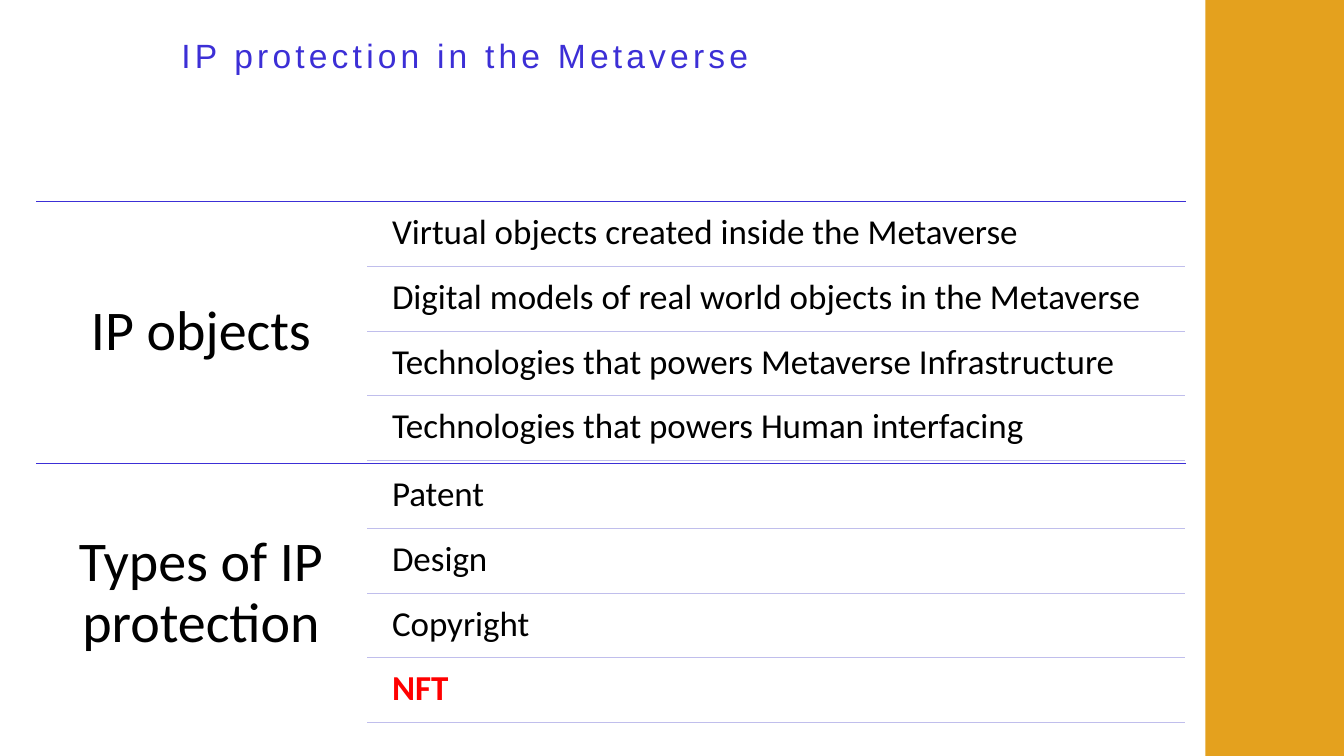
"""Build a slide that lists IP objects and types of IP protection in the Metaverse."""
from lxml.etree import SubElement
from pptx import Presentation
from pptx.dml.color import RGBColor
from pptx.enum.shapes import MSO_CONNECTOR, MSO_SHAPE
from pptx.enum.text import MSO_ANCHOR as ANCHOR, PP_ALIGN as ALIGN
from pptx.oxml import parse_xml
from pptx.oxml.ns import qn
from pptx.util import Cm, Pt

INDIGO, LAVENDER, ORANGE = "3C2FD6", "C0BEEC", "E4A11E"
BLACK, RED = "000000", "FF0000"
SECTIONS = [
    ("IP objects", [
        "Virtual objects created inside the Metaverse",
        "Digital models of real world objects in the Metaverse",
        "Technologies that powers Metaverse Infrastructure",
        "Technologies that powers Human interfacing",
    ]),
    ("Types of IP protection", ["Patent", "Design", "Copyright", "NFT"]),
]
SECTION_TOP, SECTION_PITCH, SECTION_H = 5.08, 6.6, 6.58
ROW_GAP, ROW_H, ROW_PITCH = 0.08, 1.55, 1.63
SHADOW = (
    '<a:outerShdw xmlns:a="http://schemas.openxmlformats.org/drawingml/2006/main" '
    'blurRad="57150" dist="19050" dir="5400000" algn="ctr" rotWithShape="0">'
    '<a:srgbClr val="000000"><a:alpha val="63000"/></a:srgbClr></a:outerShdw>'
)


def add_text(box, text, font, size, color, inset, anchor=ANCHOR.TOP, align=ALIGN.LEFT):
    tf = s.shapes.add_textbox(*map(Cm, box)).text_frame
    tf.word_wrap = True
    tf.vertical_anchor = anchor
    tf.margin_left = tf.margin_right = tf.margin_top = tf.margin_bottom = Cm(inset)
    p = tf.paragraphs[0]
    p.text = text
    p.alignment = align
    p.line_spacing = 0.9
    p.font.name = font
    p.font.size = Pt(size)
    p.font.color.rgb = RGBColor.from_string(color)
    return p


def add_rule(left, right, y, color):
    line = s.shapes.add_connector(MSO_CONNECTOR.STRAIGHT, Cm(left), Cm(y), Cm(right), Cm(y))
    line.line.color.rgb = RGBColor.from_string(color)
    line.line.width = Pt(0.5)
    return SubElement(line._element.spPr, qn("a:effectLst"))


prs = Presentation()
prs.slide_width, prs.slide_height = Cm(33.87), Cm(19.05)
s = prs.slides.add_slide(prs.slide_layouts[6])

band = s.shapes.add_shape(MSO_SHAPE.RECTANGLE, Cm(30.38), 0, Cm(3.49), prs.slide_height)
band.shadow.inherit = False
band.fill.solid()
band.fill.fore_color.rgb = RGBColor.from_string(ORANGE)
band.line.fill.background()

title = add_text((4.32, 0.86, 26.85, 1.17), "IP protection in the Metaverse",
                 "Arial", 24, INDIGO, 0.25, ANCHOR.MIDDLE)
title.runs[0].font._element.set("spc", "300")

for i, (heading, items) in enumerate(SECTIONS):
    top = SECTION_TOP + i * SECTION_PITCH
    effects = add_rule(0.91, 29.9, top, INDIGO)
    effects.append(parse_xml(SHADOW))
    add_text((0.91, top, 8.31, SECTION_H), heading, "Calibri", 40, BLACK, 0.43,
             ANCHOR.MIDDLE, ALIGN.CENTER)
    for j, item in enumerate(items):
        y = top + ROW_GAP + j * ROW_PITCH
        key = item == "NFT"
        p = add_text((9.63, y, 20.27, ROW_H), item, "Calibri", 25, RED if key else BLACK, 0.25)
        p.font.bold = key
        add_rule(9.25, 29.87, y + ROW_H, LAVENDER)

prs.save("out.pptx")
